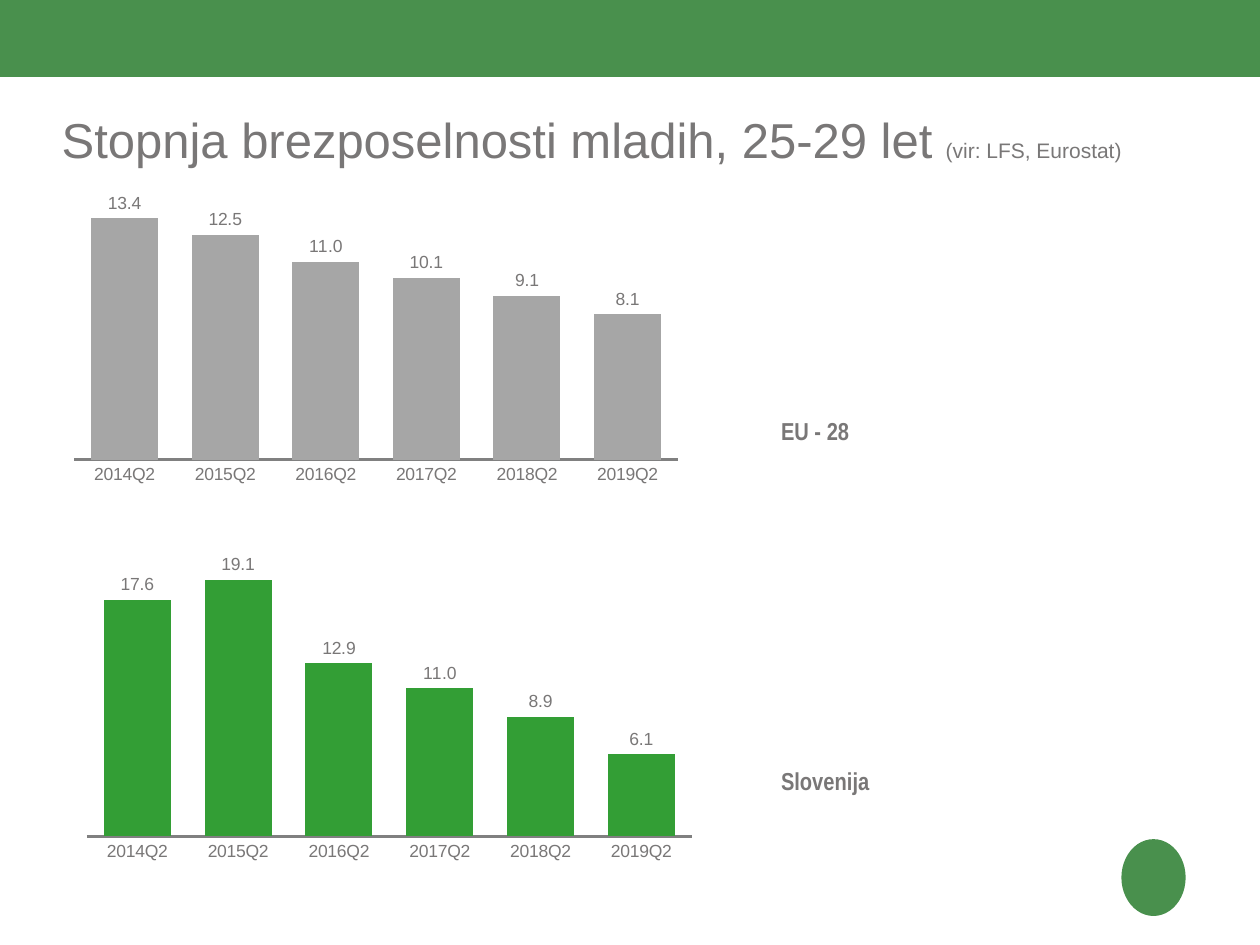
from lxml import etree
from pptx import Presentation
from pptx.chart.data import CategoryChartData as ChartData
from pptx.dml.color import RGBColor
from pptx.enum.chart import XL_CHART_TYPE as ChartType, XL_LABEL_POSITION as LabelPosition
from pptx.enum.chart import XL_TICK_LABEL_POSITION as TickLabels, XL_TICK_MARK as TickMark
from pptx.enum.shapes import MSO_SHAPE as Preset
from pptx.oxml import parse_xml
from pptx.util import Inches, Pt

GREEN, TEXT, AXIS = "49904D", "797777", "808080"
CHART_NS = "http://schemas.openxmlformats.org/drawingml/2006/chart"
QUARTERS = [f"{year}Q2" for year in range(2014, 2020)]


def color(value):
    return RGBColor.from_string(value)


def apply(target, formats):
    for name, value in formats.items():
        setattr(target, name, value)


class SlideBuilder:
    """Holds the style and the slide, and places elements on a grid of 100 columns and 75 rows."""

    def __init__(self, font="Arial", narrow="Arial Narrow", text=TEXT):
        self.presentation = Presentation()
        apply(self.presentation, {"slide_width": Inches(10), "slide_height": Inches(7.5)})
        self.font, self.narrow, self.text_color = font, narrow, text
        self.slide = self.presentation.slides.add_slide(self.presentation.slide_layouts[6])

    def box(self, column, row, columns, rows):
        column_width = self.presentation.slide_width / 100
        row_height = self.presentation.slide_height / 75
        return (round(column * column_width), round(row * row_height),
                round(columns * column_width), round(rows * row_height))

    def style(self, font, size, name=None, bold=False):
        apply(font, {"size": Pt(size), "name": name or self.font, "bold": bold})
        font.color.rgb = color(self.text_color)

    def block(self, preset, area, fill):
        shape = self.slide.shapes.add_shape(preset, *self.box(*area))
        shape.shadow.inherit = False
        shape.fill.solid()
        shape.fill.fore_color.rgb = color(fill)
        shape.line.fill.background()

    def text(self, area, runs, name=None, bold=False, **frame_formats):
        frame = self.slide.shapes.add_textbox(*self.box(*area)).text_frame
        apply(frame, {"word_wrap": True, **frame_formats})
        for words, size in runs:
            run = frame.paragraphs[0].add_run()
            run.text = words
            self.style(run.font, size, name, bold)

    def label(self, row, words):
        self.text((61, row, 16.9, 3.4), [(words, 14)], self.narrow, True)

    def columns(self, area, values, fill, maximum, plot_height):
        data = ChartData(number_format="0.0")
        data.categories = QUARTERS
        data.add_series("Series 1", values)
        chart = self.slide.shapes.add_chart(
            ChartType.COLUMN_CLUSTERED, *self.box(*area), data).chart
        apply(chart, {"has_legend": False, "has_title": False})
        self.style(chart.font, 10)
        apply(chart.value_axis, {
            "minimum_scale": 0, "maximum_scale": maximum, "has_major_gridlines": False,
            "major_tick_mark": TickMark.NONE, "tick_label_position": TickLabels.NONE})
        chart.value_axis.format.line.fill.background()
        chart.category_axis.major_tick_mark = TickMark.NONE
        axis_line = chart.category_axis.format.line
        axis_line.width = Pt(1.5)
        axis_line.color.rgb = color(AXIS)
        plot = chart.plots[0]
        apply(plot, {"gap_width": 50, "vary_by_categories": False, "has_data_labels": True})
        apply(plot.data_labels, {
            "show_value": True, "number_format": "0.0", "number_format_is_linked": False,
            "position": LabelPosition.OUTSIDE_END})
        self.style(plot.data_labels.font, 10)
        series_fill = plot.series[0].format.fill
        series_fill.solid()
        series_fill.fore_color.rgb = color(fill)
        self.plot_layout(chart, {"x": 0.02, "y": 0.02, "w": 0.96, "h": plot_height})

    def plot_layout(self, chart, shares):
        layout = parse_xml(f'<c:layout xmlns:c="{CHART_NS}"><c:manualLayout/></c:layout>')
        settings = {"layoutTarget": "inner", "xMode": "edge", "yMode": "edge", **shares}
        for name, value in settings.items():
            etree.SubElement(layout[0], f"{{{CHART_NS}}}{name}", val=str(value))
        plot_area = chart.plots[0]._element.getparent()
        for previous in plot_area.findall(f"{{{CHART_NS}}}layout"):
            plot_area.remove(previous)
        plot_area.insert(0, layout)


def main():
    builder = SlideBuilder()
    builder.block(Preset.RECTANGLE, (0, -0.1, 100, 6.2), GREEN)
    builder.block(Preset.OVAL, (89, 66.6, 5.1, 6.1), GREEN)
    builder.text((4.9, 8.2, 92.6, 7.1),
                 [("Stopnja brezposelnosti mladih, 25-29 let ", 28), ("(vir: LFS, Eurostat)", 12)],
                 margin_left=0, margin_right=0, margin_top=Inches(0.05), margin_bottom=0)
    builder.label(32.5, "EU - 28")
    builder.label(60.3, "Slovenija")
    builder.columns((4.9, 13.1, 49.9, 26), (13.4, 12.5, 11, 10.1, 9.1, 8.1), "A6A6A6", 16, 0.88)
    builder.columns((5.9, 39.1, 50, 30), (17.6, 19.1, 12.9, 11, 8.9, 6.1), "339E35", 25, 0.89)
    builder.presentation.save("out.pptx")


if __name__ == "__main__":
    main()
